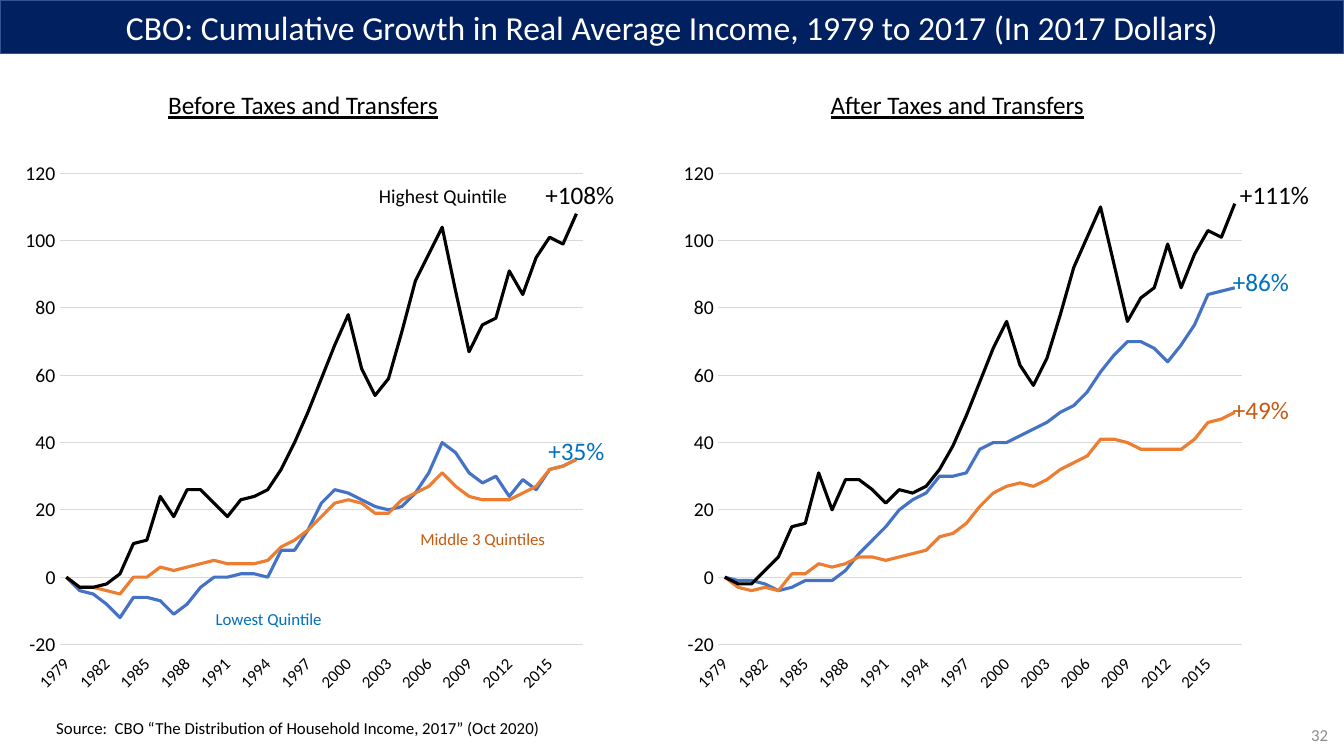
from lxml import etree
from pptx import Presentation
from pptx.chart.data import CategoryChartData
from pptx.dml.color import RGBColor
from pptx.enum.chart import XL_CHART_TYPE, XL_TICK_LABEL_POSITION, XL_TICK_MARK
from pptx.enum.text import MSO_ANCHOR, MSO_AUTO_SIZE, PP_ALIGN
from pptx.oxml.ns import qn
from pptx.util import Inches, Pt

LINE = XL_CHART_TYPE.LINE
LABELS_LOW = XL_TICK_LABEL_POSITION.LOW
NO_TICKS = XL_TICK_MARK.NONE
MIDDLE = MSO_ANCHOR.MIDDLE
NO_FIT = MSO_AUTO_SIZE.NONE
LEFT, CENTER, RIGHT = PP_ALIGN.LEFT, PP_ALIGN.CENTER, PP_ALIGN.RIGHT

FONT = "Calibri"
BLACK, WHITE, NAVY, GRID, GRAY = "000000", "FFFFFF", "002060", "D9D9D9", "8C8C8C"
LOWEST_TEXT, MIDDLE_TEXT = "0070C0", "C55A11"
QUINTILE_COLORS = ["4472C4", "ED7D31", BLACK]
YEARS = range(1979, 2018)
PLOT_LAYOUT = {"x": 0.08, "y": 0.04, "w": 0.9, "h": 0.85}

BEFORE_TAXES = [
    [0, -4, -5, -8, -12, -6, -6, -7, -11, -8, -3, 0, 0, 1, 1, 0, 8, 8, 14, 22, 26, 25, 23,
     21, 20, 21, 25, 31, 40, 37, 31, 28, 30, 24, 29, 26, 32, 33, 35],
    [0, -3, -3, -4, -5, 0, 0, 3, 2, 3, 4, 5, 4, 4, 4, 5, 9, 11, 14, 18, 22, 23, 22,
     19, 19, 23, 25, 27, 31, 27, 24, 23, 23, 23, 25, 27, 32, 33, 35],
    [0, -3, -3, -2, 1, 10, 11, 24, 18, 26, 26, 22, 18, 23, 24, 26, 32, 40, 49, 59, 69, 78, 62,
     54, 59, 73, 88, 96, 104, 85, 67, 75, 77, 91, 84, 95, 101, 99, 108],
]
AFTER_TAXES = [
    [0, -1, -1, -2, -4, -3, -1, -1, -1, 2, 7, 11, 15, 20, 23, 25, 30, 30, 31, 38, 40, 40, 42,
     44, 46, 49, 51, 55, 61, 66, 70, 70, 68, 64, 69, 75, 84, 85, 86],
    [0, -3, -4, -3, -4, 1, 1, 4, 3, 4, 6, 6, 5, 6, 7, 8, 12, 13, 16, 21, 25, 27, 28,
     27, 29, 32, 34, 36, 41, 41, 40, 38, 38, 38, 38, 41, 46, 47, 49],
    [0, -2, -2, 2, 6, 15, 16, 31, 20, 29, 29, 26, 22, 26, 25, 27, 32, 39, 48, 58, 68, 76, 63,
     57, 65, 78, 92, 101, 110, 93, 76, 83, 86, 99, 86, 96, 103, 101, 111],
]

LABELS = [
    ("Lowest Quintile", 2.04, 5.99, 1.31, 12, LOWEST_TEXT),
    ("Middle 3 Quintiles", 4.07, 5.2, 1.69, 12, MIDDLE_TEXT),
    ("Highest Quintile", 3.66, 1.78, 1.49, 14, BLACK),
    ("+35%", 5.34, 4.27, 0.76, 18, LOWEST_TEXT),
    ("+108%", 5.31, 1.73, 0.89, 18, BLACK),
    ("+49%", 12.13, 3.86, 0.76, 18, MIDDLE_TEXT),
    ("+86%", 12.13, 2.59, 0.76, 18, LOWEST_TEXT),
    ("+111%", 12.2, 1.73, 0.89, 18, BLACK),
]


def rgb(color):
    return RGBColor.from_string(color)


def place(shape, left, top, width, height):
    shape.left, shape.top = Inches(left), Inches(top)
    shape.width, shape.height = Inches(width), Inches(height)


def format_font(font, size, color):
    font.name, font.size = FONT, Pt(size)
    font.color.rgb = rgb(color)


def write_text(frame, text, size=18, color=BLACK, align=LEFT, underline=None):
    paragraph = frame.paragraphs[0]
    paragraph.alignment = align
    run = paragraph.add_run()
    run.text = text
    format_font(run.font, size, color)
    run.font.underline = underline


def add_title(slide, text):
    title = slide.shapes.title
    place(title, 0, 0, 13.33, 0.53)
    title.fill.solid()
    title.fill.fore_color.rgb = rgb(NAVY)
    title.line.color.rgb = rgb("325491")
    title.line.width = Pt(1)
    frame = title.text_frame
    frame.auto_size = NO_FIT
    frame.vertical_anchor = MIDDLE
    write_text(frame, text, size=24, color=WHITE, align=CENTER)


def add_label(slide, text, left, top, width, height=0.4, wrap=False, **text_format):
    box = slide.shapes.add_textbox(Inches(left), Inches(top), Inches(width), Inches(height))
    box.text_frame.word_wrap = wrap
    write_text(box.text_frame, text, **text_format)
    return box


def set_plot_layout(chart):
    plot_area = chart._chartSpace.find(".//" + qn("c:plotArea"))
    for old_layout in plot_area.findall(qn("c:layout")):
        plot_area.remove(old_layout)
    layout = etree.Element(qn("c:layout"))
    manual = etree.SubElement(layout, qn("c:manualLayout"))
    settings = {"layoutTarget": "inner", "xMode": "edge", "yMode": "edge", **PLOT_LAYOUT}
    for name, value in settings.items():
        etree.SubElement(manual, qn("c:" + name)).set("val", str(value))
    plot_area.insert(0, layout)


def format_year_axis(axis):
    axis.tick_label_position = LABELS_LOW
    axis.major_tick_mark = axis.minor_tick_mark = NO_TICKS
    axis.has_major_gridlines = False
    format_font(axis.tick_labels.font, 12, BLACK)
    axis.format.line.color.rgb = rgb(GRID)
    axis.format.line.width = Pt(0.75)
    element = axis._element
    element.find(qn("c:txPr")).find(qn("a:bodyPr")).set("rot", "-2700000")
    skip = etree.Element(qn("c:tickLblSkip"))
    skip.set("val", "3")
    element.find(qn("c:noMultiLvlLbl")).addprevious(skip)


def format_growth_axis(axis):
    axis.minimum_scale, axis.maximum_scale, axis.major_unit = -20, 120, 20
    axis.major_tick_mark = axis.minor_tick_mark = NO_TICKS
    axis.tick_labels.number_format = "##0"
    axis.tick_labels.number_format_is_linked = False
    format_font(axis.tick_labels.font, 14, BLACK)
    axis.format.line.fill.background()
    axis.has_major_gridlines = True
    axis.major_gridlines.format.line.color.rgb = rgb(GRID)
    axis.major_gridlines.format.line.width = Pt(0.75)


def add_growth_chart(slide, left, quintiles):
    data = CategoryChartData()
    data.categories = YEARS
    for number, values in enumerate(quintiles, 1):
        data.add_series(f"Series {number}", values)
    frame = slide.shapes.add_chart(
        LINE, Inches(left), Inches(1.5), Inches(5.77), Inches(5.5), data)
    chart = frame.chart
    chart.has_title = chart.has_legend = False
    format_font(chart.font, 10, BLACK)
    chart.plots[0].vary_by_categories = False
    for series, color in zip(chart.plots[0].series, QUINTILE_COLORS):
        series.smooth = False
        series.format.line.color.rgb = rgb(color)
        series.format.line.width = Pt(2.25)
    format_year_axis(chart.category_axis)
    format_growth_axis(chart.value_axis)
    set_plot_layout(chart)


def main():
    presentation = Presentation()
    presentation.slide_width, presentation.slide_height = Inches(13.33), Inches(7.5)
    slide = presentation.slides.add_slide(presentation.slide_layouts[5])

    add_title(slide, "CBO: Cumulative Growth in Real Average Income, 1979 to 2017 (In 2017 Dollars)")
    add_growth_chart(slide, 0.13, BEFORE_TAXES)
    add_growth_chart(slide, 6.66, AFTER_TAXES)
    add_label(slide, "Before Taxes and Transfers", 1.57, 0.84, 2.91, underline=True)
    add_label(slide, "After Taxes and Transfers", 8.14, 0.84, 2.8, underline=True)
    for text, left, top, width, size, color in LABELS:
        add_label(slide, text, left, top, width, size / 60 + 0.1, size=size, color=color)
    add_label(slide, "Source:  CBO “The Distribution of Household Income, 2017” (Oct 2020)",
              0.46, 7.07, 5.06, 0.3, size=12)
    page_number = add_label(slide, "32", 10.27, 7.09, 3, wrap=True,
                            size=12, color=GRAY, align=RIGHT)
    page_number.text_frame.vertical_anchor = MIDDLE
    presentation.save("out.pptx")


if __name__ == "__main__":
    main()
